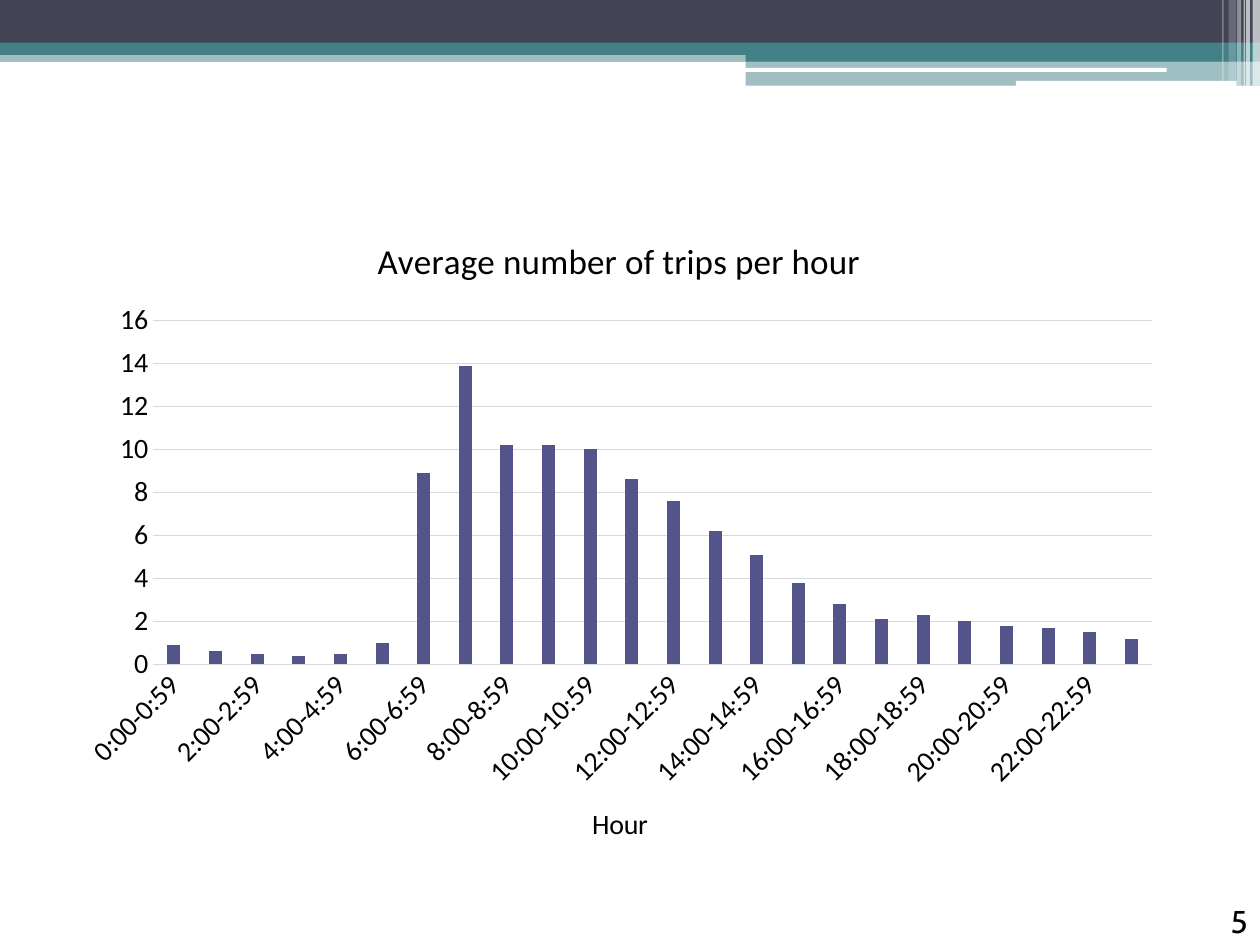
from dataclasses import dataclass
from typing import Optional

from lxml import etree
from pptx import Presentation
from pptx.chart.data import CategoryChartData
from pptx.dml.color import RGBColor
from pptx.enum.chart import XL_CHART_TYPE as ChartType, XL_TICK_MARK as TickMark
from pptx.enum.shapes import MSO_SHAPE as Preset
from pptx.enum.text import PP_ALIGN as Align
from pptx.oxml.ns import qn
from pptx.util import Cm, Pt

COLORS = {
    "navy": "424456",
    "teal": "438086",
    "white": "FFFFFF",
    "black": "000000",
    "bar": "53548A",
    "grid": "D9D9D9",
}
CHART_FONT = "Calibri"
AUTOMATIC_ROTATION = "-60000000"
TRIPS = [0.9, 0.6, 0.5, 0.4, 0.5, 1, 8.9, 13.9, 10.2, 10.2, 10, 8.6,
         7.6, 6.2, 5.1, 3.8, 2.8, 2.1, 2.3, 2, 1.8, 1.7, 1.5, 1.2]


@dataclass
class Band:
    """A filled header piece; lengths in centimetres, opacity in percent."""
    left: float
    top: float
    width: float
    height: float
    color: str
    opacity: int = 100
    preset: Preset = Preset.RECTANGLE


HEADER = [
    Band(0, 1.02, 25.4, 0.23, "teal", 50),
    Band(0, 0, 25.4, 0.87, "navy"),
    Band(0, 0.86, 25.4, 0.25, "teal"),
    Band(15.03, 0.99, 10.37, 0.25, "teal"),
    Band(15.03, 1.22, 10.37, 0.51, "teal", 50),
    Band(15.01, 1.37, 8.51, 0.08, "white", preset=Preset.ROUNDED_RECTANGLE),
    Band(20.48, 1.63, 4.45, 0.1, "white", preset=Preset.ROUNDED_RECTANGLE),
    # Thin stripes at the right edge
    Band(25.25, 0, 0.15, 1.73, "white", 65),
    Band(25.12, 0, 0.08, 1.73, "white", 65),
    Band(25.07, 0, 0.03, 1.73, "white", 60),
    Band(24.94, 0, 0.08, 1.73, "white", 40),
    Band(24.77, 0, 0.15, 1.63, "white", 20),
    Band(24.64, 0, 0.03, 1.63, "white", 30),
]


def rgb(name: str) -> RGBColor:
    return RGBColor.from_string(COLORS[name])


def style_font(font, size: int, name: str = CHART_FONT, bold: bool = False) -> None:
    font.size = Pt(size)
    font.name = name
    font.bold = bold
    font.color.rgb = rgb("black")


def draw_band(slide, band: Band) -> None:
    shape = slide.shapes.add_shape(band.preset, Cm(band.left), Cm(band.top),
                                   Cm(band.width), Cm(band.height))
    shape.shadow.inherit = False
    shape.line.fill.background()
    shape.fill.solid()
    shape.fill.fore_color.rgb = rgb(band.color)
    if band.opacity < 100:
        color = shape.fill._xPr.find(qn("a:solidFill"))[0]
        etree.SubElement(color, qn("a:alpha"), val=str(band.opacity * 1000))


def place(element, index: int, x: float, y: float,
          size: Optional[tuple[float, float]] = None) -> None:
    """Set a manual chart layout, in percent of the chart area."""
    for old in element.findall(qn("c:layout")):
        element.remove(old)
    layout = etree.Element(qn("c:layout"))
    manual = etree.SubElement(layout, qn("c:manualLayout"))
    settings = {"layoutTarget": "inner"} if size else {}
    settings |= {"xMode": "edge", "yMode": "edge", "x": x / 100, "y": y / 100}
    if size:
        settings |= {"w": size[0] / 100, "h": size[1] / 100}
    for tag, value in settings.items():
        etree.SubElement(manual, qn(f"c:{tag}"), val=str(value))
    element.insert(index, layout)


def write_title(title, text: str, size: int, x: float, y: float) -> None:
    title.text_frame.text = text
    style_font(title.text_frame.paragraphs[0].runs[0].font, size)
    place(title._element, 1, x, y)


def draw_chart(slide) -> None:
    data = CategoryChartData(number_format="0")
    data.categories = [f"{hour}:00-{hour}:59" for hour in range(len(TRIPS))]
    data.add_series("Series 1", TRIPS)
    chart = slide.shapes.add_chart(ChartType.COLUMN_CLUSTERED, Cm(1.27), Cm(4.32),
                                   Cm(22.43), Cm(13.21), data).chart
    style_font(chart.font, 16)
    chart.has_legend = False
    chart.has_title = True
    write_title(chart.chart_title, "Average number of trips per hour", 20, 27.7, 2.3)
    chart.chart_title.include_in_layout = False

    # Bars
    plot = chart.plots[0]
    plot.vary_by_categories = False
    plot.gap_width = 219
    plot.overlap = -27
    fill = plot.series[0].format.fill
    fill.solid()
    fill.fore_color.rgb = rgb("bar")
    place(plot._element.getparent(), 0, 8.1, 16.2, (89.8, 52.5))

    # Axes
    hours, trips = chart.category_axis, chart.value_axis
    for axis in (hours, trips):
        axis.major_tick_mark = axis.minor_tick_mark = TickMark.NONE
        style_font(axis.tick_labels.font, 16)
        label_body = axis._element.find(qn("c:txPr")).find(qn("a:bodyPr"))
        label_body.set("rot", AUTOMATIC_ROTATION)
    hours.has_title = True
    write_title(hours.axis_title, "Hour", 16, 47.1, 89.3)
    trips.minimum_scale, trips.maximum_scale, trips.major_unit = 0, 16, 2
    trips.tick_labels.number_format = "0"
    trips.tick_labels.number_format_is_linked = False
    trips.format.line.fill.background()
    for line in (hours.format.line, trips.major_gridlines.format.line):
        line.color.rgb = rgb("grid")
        line.width = Pt(0.75)


def draw_page_number(slide) -> None:
    box = slide.shapes.add_textbox(Cm(23.7), Cm(18.06), Cm(1.7), Cm(1.02))
    box.text_frame.word_wrap = True
    paragraph = box.text_frame.paragraphs[0]
    paragraph.text = "5"
    paragraph.alignment = Align.RIGHT
    style_font(paragraph.runs[0].font, 18, "Cabin")


def main() -> None:
    presentation = Presentation()
    presentation.slide_width, presentation.slide_height = Cm(25.4), Cm(19.05)
    slide = presentation.slides.add_slide(presentation.slide_layouts[6])
    for band in HEADER:
        draw_band(slide, band)
    draw_page_number(slide)
    draw_chart(slide)
    presentation.save("out.pptx")


if __name__ == "__main__":
    main()
